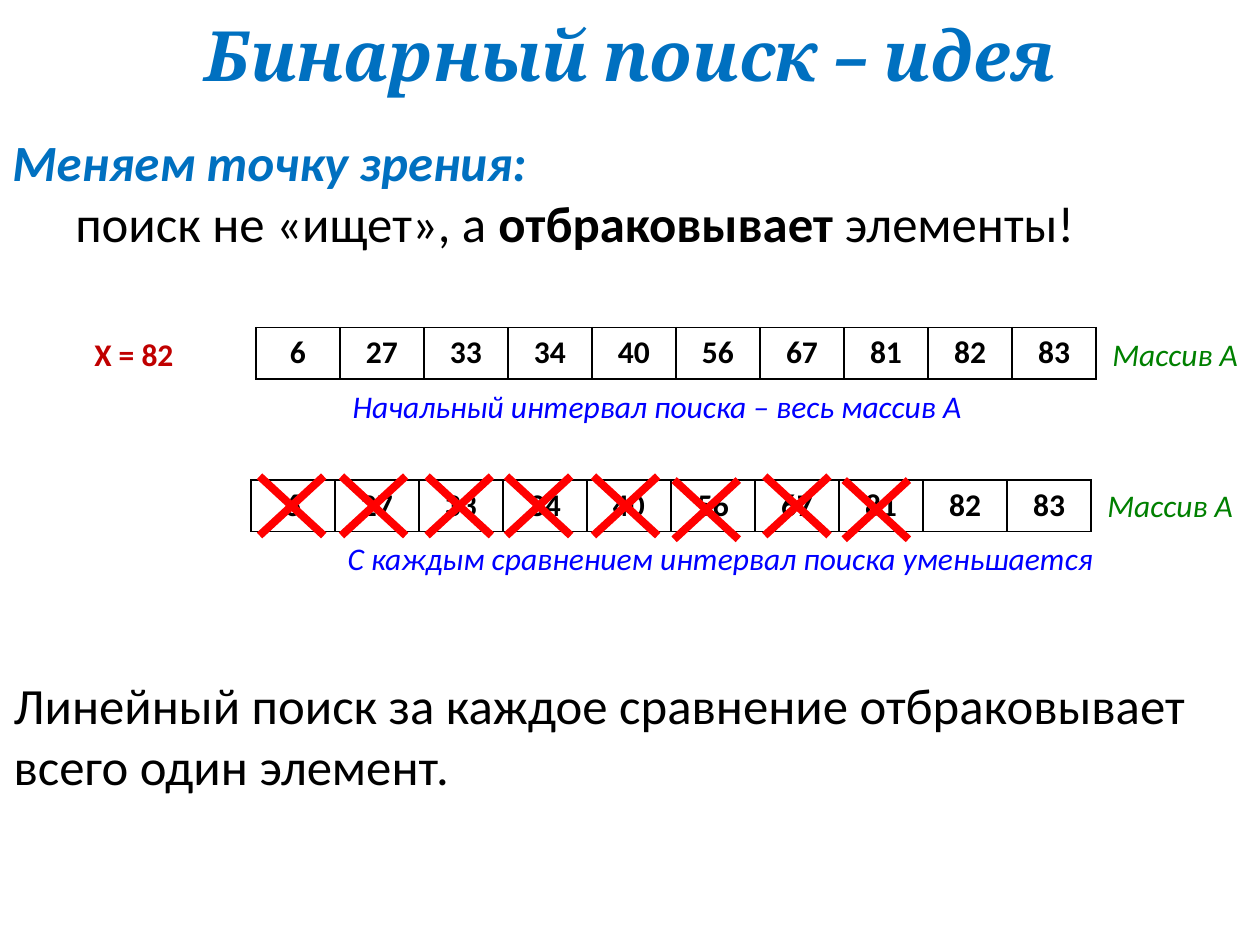
from dataclasses import dataclass

from lxml import etree
from pptx import Presentation
from pptx.dml.color import RGBColor
from pptx.enum.shapes import MSO_CONNECTOR
from pptx.enum.text import MSO_ANCHOR, MSO_AUTO_SIZE, PP_ALIGN
from pptx.oxml.ns import qn
from pptx.util import Inches, Pt

LINE = MSO_CONNECTOR.STRAIGHT
MIDDLE = MSO_ANCHOR.MIDDLE
GROW = MSO_AUTO_SIZE.SHAPE_TO_FIT_TEXT
CENTER = PP_ALIGN.CENTER
BLACK, BLUE, RED = "000000", "0070C0", "FF0000"
NUMBERS = (6, 27, 33, 34, 40, 56, 67, 81, 82, 83)
CELL, HIGH = 0.667, 0.41


@dataclass
class Style:
    size: float
    color: str
    bold: bool = False
    italic: bool = False
    face: str = "Calibri"


@dataclass
class Label:
    text: str
    left: float
    top: float
    width: float
    height: float
    style: Style
    wrap: bool = False


@dataclass
class Cross:
    left: float
    top: float = 3.78


HEAD = Style(39.6, BLUE, True, True, "Cambria")
LEAD = Style(29, BLUE, True, True)
BODY = Style(29, BLACK)
STRONG = Style(29, BLACK, True)
DIGIT = Style(18, BLACK, True)
NAME = Style(18, "008000", italic=True)
NOTE = Style(18, "0000FF", italic=True)
KEY = Style(18, "C00000", True)

TITLE = Label("Бинарный поиск – идея", 0, 0.02, 10, 0.81, HEAD, True)
IDEA = Label("", 0, 0.99, 10, 1.1, BODY, True)
LABELS = (
    Label("Линейный поиск за каждое сравнение отбраковывает всего один элемент.",
          0.01, 5.3, 10, 1.47, BODY, True),
    Label("Массив А", 8.73, 2.61, 1.26, 0.4, NAME),
    Label("Начальный интервал поиска – весь массив А", 2.7, 3.02, 5.59, 0.4, NOTE),
    Label("Х = 82", 0.65, 2.61, 0.87, 0.41, KEY),
    Label("Массив А", 8.69, 3.81, 1.26, 0.4, NAME),
    Label("С каждым сравнением интервал поиска уменьшается",
          2.66, 4.23, 6.41, 0.4, NOTE),
)
ARRAYS = ((2.03, 2.6), (1.99, 3.81))
CROSSES = (Cross(2.06), Cross(2.71), Cross(3.39), Cross(4.02),
           Cross(4.71), Cross(5.35, 3.81), Cross(6.07), Cross(6.7, 3.81))


def paint(code: str) -> RGBColor:
    """Turn a hex string into a colour."""
    return RGBColor.from_string(code)


def set_font(font, style: Style) -> None:
    """Give a font its style."""
    font.name, font.size = style.face, Pt(style.size)
    font.bold, font.italic = style.bold, style.italic
    font.color.rgb = paint(style.color)


def add_label(slide, label: Label):
    """Add a text box and return its text frame."""
    box = slide.shapes.add_textbox(Inches(label.left), Inches(label.top),
                                   Inches(label.width), Inches(label.height))
    frame = box.text_frame
    frame.word_wrap = label.wrap
    if not label.wrap:
        frame.auto_size = GROW
    frame.text = label.text
    set_font(frame.paragraphs[0].font, label.style)
    return frame


def add_idea(slide) -> None:
    """Add the statement with mixed styles."""
    line = add_label(slide, IDEA).paragraphs[0]
    lead = line.add_run()
    lead.text = "Меняем точку зрения:"
    set_font(lead.font, LEAD)
    line.add_line_break()
    for text, style in (("\tпоиск не «ищет», а ", BODY),
                        ("отбраковывает", STRONG), (" элементы!", BODY)):
        run = line.add_run()
        run.text = text
        set_font(run.font, style)


def add_border(cell) -> None:
    """Draw a thin black line on each side of a cell."""
    props = cell._tc.get_or_add_tcPr()
    for spot, side in enumerate(("a:lnL", "a:lnR", "a:lnT", "a:lnB")):
        edge = etree.Element(qn(side), w=str(Pt(1)))
        fill = etree.SubElement(edge, qn("a:solidFill"))
        etree.SubElement(fill, qn("a:srgbClr"), val=BLACK)
        props.insert(spot, edge)


def add_array(slide, left: float, top: float) -> None:
    """Add the array as a table of one row."""
    count = len(NUMBERS)
    table = slide.shapes.add_table(1, count, Inches(left), Inches(top),
                                   Inches(CELL * count), Inches(HIGH)).table
    table.first_row = table.horz_banding = False
    for column, cell, number in zip(table.columns, table.iter_cells(), NUMBERS):
        column.width = Inches(CELL)
        cell.text = str(number)
        cell.fill.background()
        line = cell.text_frame.paragraphs[0]
        line.alignment = CENTER
        set_font(line.font, DIGIT)
        add_border(cell)


def add_cross(slide, cross: Cross) -> None:
    """Strike out a number with two grouped lines."""
    group = slide.shapes.add_group_shape()
    left, right = Inches(cross.left), Inches(cross.left + 0.51)
    top, base = Inches(cross.top), Inches(cross.top + 0.47)
    for start, end in ((left, right), (right, left)):
        stroke = group.shapes.add_connector(LINE, start, top, end, base)
        stroke.line.color.rgb = paint(RED)
        stroke.line.width = Pt(4.5)
        etree.SubElement(stroke._element.spPr, qn("a:effectLst"))


def main() -> None:
    """Build and save the slide."""
    deck = Presentation()
    deck.slide_width, deck.slide_height = Inches(10), Inches(7.5)
    slide = deck.slides.add_slide(deck.slide_layouts[6])
    title = add_label(slide, TITLE)
    title.vertical_anchor = MIDDLE
    title.paragraphs[0].alignment = CENTER
    add_idea(slide)
    for left, top in ARRAYS:
        add_array(slide, left, top)
    for label in LABELS:
        add_label(slide, label)
    for cross in CROSSES:
        add_cross(slide, cross)
    deck.save("out.pptx")


if __name__ == "__main__":
    main()
